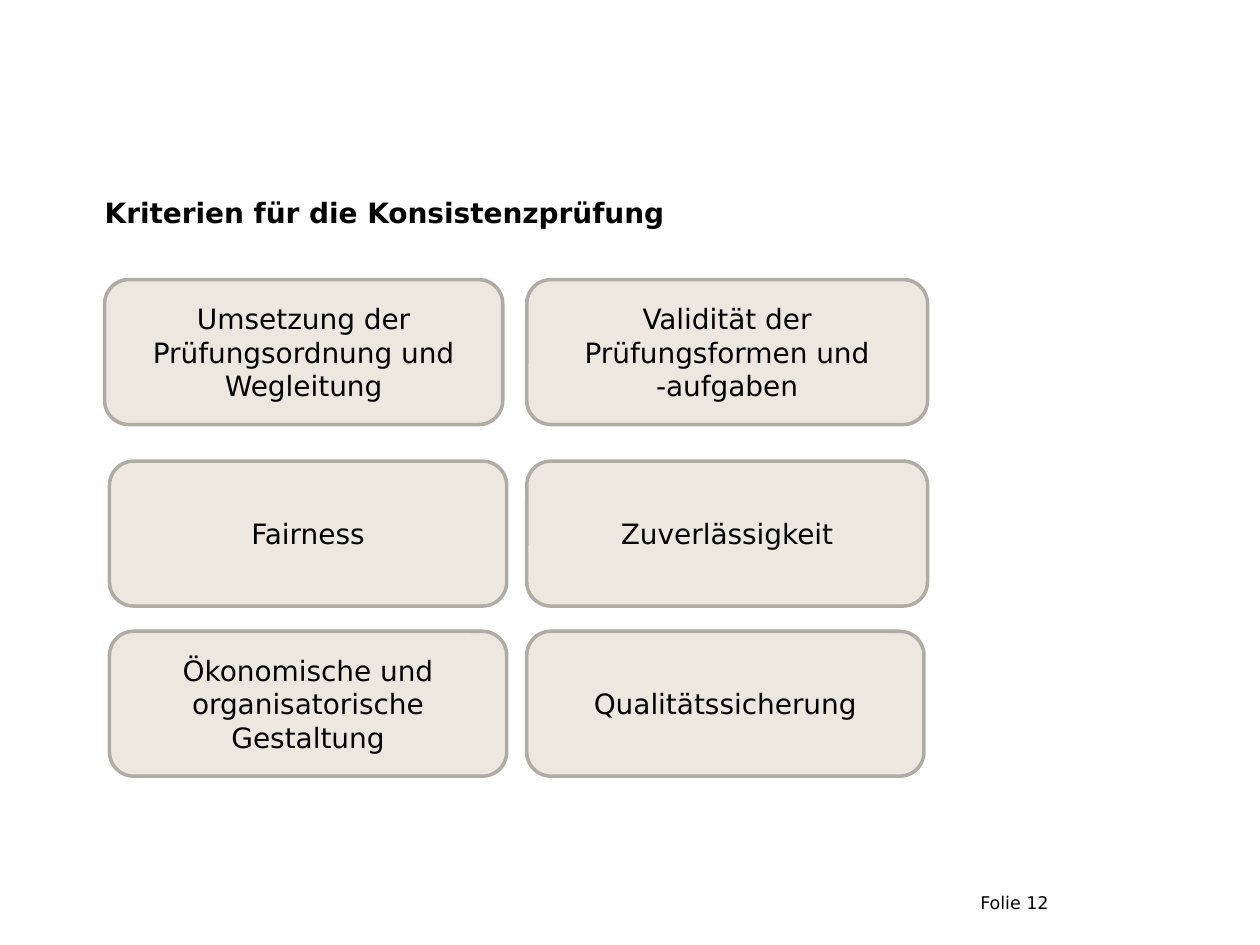
from pptx import Presentation
from pptx.dml.color import RGBColor
from pptx.enum.shapes import MSO_SHAPE
from pptx.enum.text import MSO_ANCHOR, PP_ALIGN
from pptx.util import Pt

# Content
TITLE = "Kriterien für die Konsistenzprüfung"
FOOTER = "Folie 12"
# One row per line: top, then (text, left, width) for each box
ROWS = [
    (159.8, [("Umsetzung der Prüfungsordnung und Wegleitung", 59.8, 227.5),
             ("Validität der Prüfungsformen und -aufgaben", 301, 229)]),
    (263.5, [("Fairness", 62.6, 227),
             ("Zuverlässigkeit", 301, 229)]),
    (360.7, [("Ökonomische und organisatorische Gestaltung", 62.6, 227),
             ("Qualitätssicherung", 301, 227)]),
]

# Style
FONT = "DejaVu Sans"
BLACK = RGBColor(0x00, 0x00, 0x00)
BEIGE = RGBColor(0xED, 0xE8, 0xDF)
GREY = RGBColor(0xAF, 0xAC, 0xA5)
BOX_HEIGHT = 82.8


def place(sp, left, top, width, height):
    sp.left, sp.top, sp.width, sp.height = map(Pt, (left, top, width, height))


def write(sp, text, size, bold=False, align=PP_ALIGN.LEFT,
          anchor=MSO_ANCHOR.TOP, inset=None):
    tf = sp.text_frame
    tf.word_wrap = True
    tf.vertical_anchor = anchor
    if inset is not None:
        tf.margin_left = tf.margin_right = Pt(inset)
        tf.margin_top = tf.margin_bottom = Pt(inset)
    p = tf.paragraphs[0]
    p.alignment = align
    r = p.add_run()
    r.text = text
    r.font.name = FONT
    r.font.size = Pt(size)
    r.font.bold = bold
    r.font.color.rgb = BLACK


prs = Presentation()
prs.slide_width, prs.slide_height = Pt(720), Pt(540)
s = prs.slides.add_slide(prs.slide_layouts[5])

# Title
title = s.shapes.title
place(title, 59.8, 111.6, 606, 41.8)
write(title, TITLE, 16, bold=True, inset=0)

# Slide number
footer = s.shapes.add_textbox(Pt(560.2), Pt(509.8), Pt(129.6), Pt(30.2))
write(footer, FOOTER, 10, inset=0)

# Criteria boxes
for top, boxes in ROWS:
    for text, left, width in boxes:
        sp = s.shapes.add_shape(MSO_SHAPE.ROUNDED_RECTANGLE, Pt(left), Pt(top),
                                Pt(width), Pt(BOX_HEIGHT))
        sp.shadow.inherit = False
        sp.fill.solid()
        sp.fill.fore_color.rgb = BEIGE
        sp.line.color.rgb = GREY
        sp.line.width = Pt(2)
        write(sp, text, 16, align=PP_ALIGN.CENTER, anchor=MSO_ANCHOR.MIDDLE)

prs.save("out.pptx")
